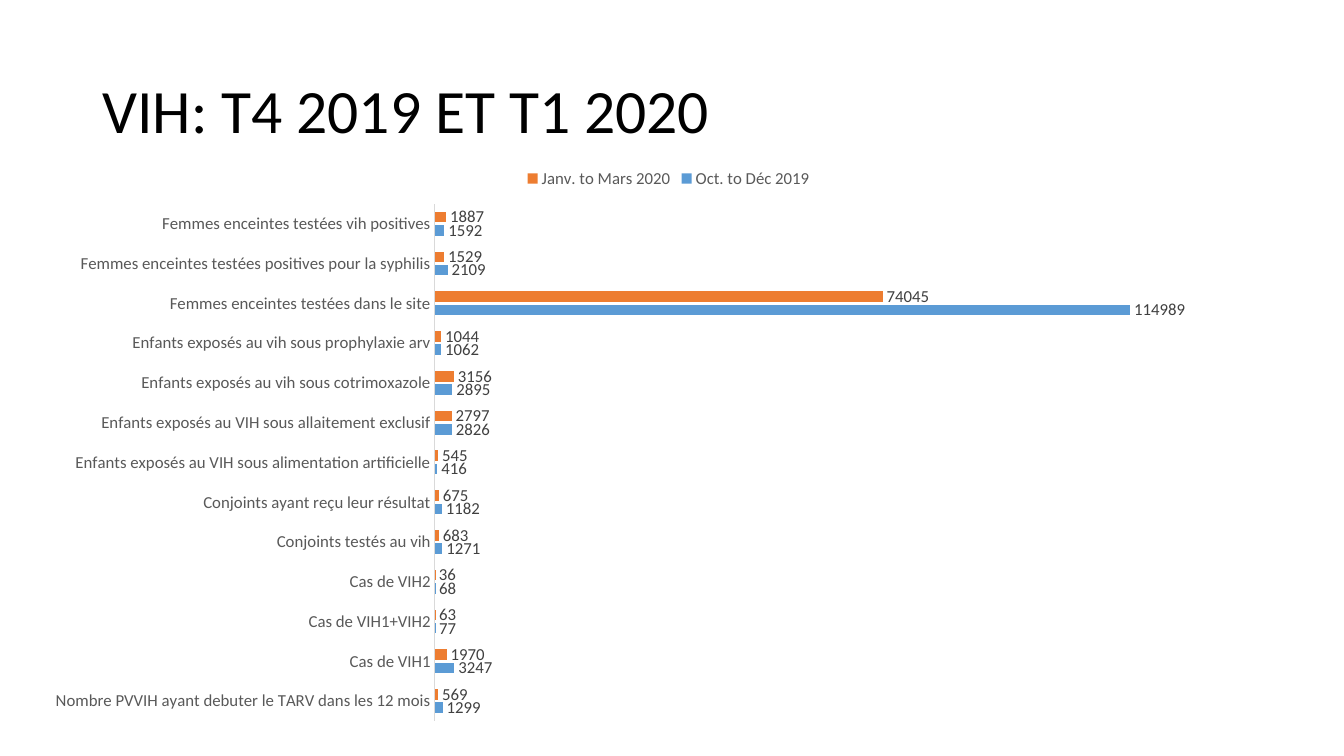
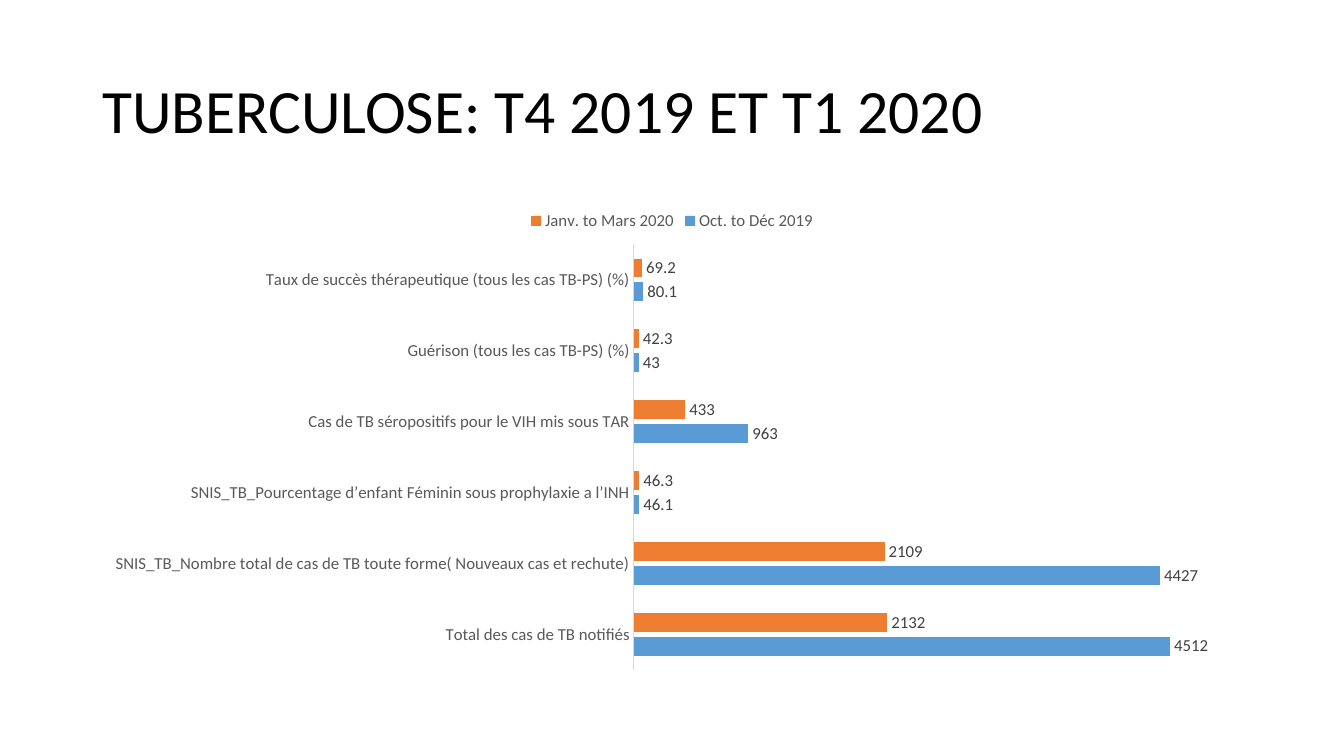
from pptx import Presentation
from pptx.chart.data import CategoryChartData
from pptx.dml.color import RGBColor
from pptx.enum.chart import XL_CHART_TYPE, XL_LABEL_POSITION, XL_LEGEND_POSITION, XL_TICK_MARK
from pptx.enum.text import MSO_ANCHOR
from pptx.util import Cm, Pt

BAR = XL_CHART_TYPE.BAR_CLUSTERED
OUTSIDE_END = XL_LABEL_POSITION.OUTSIDE_END
TOP = XL_LEGEND_POSITION.TOP
NO_TICK = XL_TICK_MARK.NONE
MIDDLE = MSO_ANCHOR.MIDDLE

FONT = "Calibri"
COLORS = {
    "title": "000000",
    "axis_text": "595959",
    "axis_line": "D9D9D9",
    "value": "404040",
    "2019": "5B9BD5",
    "2020": "ED7D31",
}
PERIODS = [("Oct. to Déc 2019", "2019"), ("Janv. to Mars 2020", "2020")]

HIV = [
    ("Nombre PVVIH ayant debuter le TARV dans les 12 mois", 1299, 569),
    ("Cas de VIH1", 3247, 1970),
    ("Cas de VIH1+VIH2", 77, 63),
    ("Cas de VIH2", 68, 36),
    ("Conjoints testés au vih", 1271, 683),
    ("Conjoints ayant reçu leur résultat", 1182, 675),
    ("Enfants exposés au VIH sous alimentation artificielle", 416, 545),
    ("Enfants exposés au VIH sous allaitement exclusif", 2826, 2797),
    ("Enfants exposés au vih sous cotrimoxazole", 2895, 3156),
    ("Enfants exposés au vih sous prophylaxie arv", 1062, 1044),
    ("Femmes enceintes testées dans le site", 114989, 74045),
    ("Femmes enceintes testées positives pour la syphilis", 2109, 1529),
    ("Femmes enceintes testées vih positives", 1592, 1887),
]
TB = [
    ("Total des cas de TB notifiés", 4512, 2132),
    ("SNIS_TB_Nombre total de cas de TB toute forme( Nouveaux cas et rechute)", 4427, 2109),
    ("SNIS_TB_Pourcentage d’enfant Féminin sous prophylaxie a l’INH", 46.1, 46.3),
    ("Cas de TB séropositifs pour le VIH mis sous TAR", 963, 433),
    ("Guérison (tous les cas TB-PS) (%)", 43, 42.3),
    ("Taux de succès thérapeutique (tous les cas TB-PS) (%)", 80.1, 69.2),
]


def rgb(name):
    return RGBColor.from_string(COLORS[name])


def style_font(font, size, color):
    font.name = FONT
    font.size = Pt(size)
    font.color.rgb = rgb(color)


def add_title(s, text):
    tf = s.shapes.add_textbox(Cm(2.33), Cm(1.01), Cm(29.21), Cm(3.68)).text_frame
    tf.word_wrap = True
    tf.vertical_anchor = MIDDLE
    p = tf.paragraphs[0]
    p.line_spacing = 0.9
    r = p.add_run()
    r.text = text
    style_font(r.font, 44, "title")


def style_series(series, color):
    series.format.fill.solid()
    series.format.fill.fore_color.rgb = rgb(color)
    series.invert_if_negative = False
    labels = series.data_labels
    labels.show_value = True
    labels.position = OUTSIDE_END
    labels.number_format = "General"
    labels.number_format_is_linked = False
    style_font(labels.font, 12, "value")


def add_bar_chart(s, rows, left, top, width, height):
    cats, *columns = zip(*rows)
    data = CategoryChartData()
    data.categories = cats
    for (name, _), values in zip(PERIODS, columns):
        data.add_series(name, values)
    chart = s.shapes.add_chart(BAR, Cm(left), Cm(top), Cm(width), Cm(height), data).chart
    style_font(chart.font, 12, "title")
    chart.has_title = False

    chart.has_legend = True
    chart.legend.position = TOP
    chart.legend.include_in_layout = False
    style_font(chart.legend.font, 12, "axis_text")

    cat_axis = chart.category_axis
    cat_axis.major_tick_mark = NO_TICK
    cat_axis.minor_tick_mark = NO_TICK
    cat_axis.format.line.color.rgb = rgb("axis_line")
    cat_axis.format.line.width = Pt(0.75)
    style_font(cat_axis.tick_labels.font, 12, "axis_text")

    val_axis = chart.value_axis
    val_axis.visible = False
    val_axis.has_major_gridlines = False
    val_axis.minimum_scale = 0

    plot = chart.plots[0]
    plot.vary_by_categories = False
    plot.gap_width = 150
    plot.overlap = -25
    for series, (_, color) in zip(plot.series, PERIODS):
        style_series(series, color)


def add_chart_slide(prs, title, rows, *box):
    s = prs.slides.add_slide(prs.slide_layouts[6])
    add_title(s, title)
    add_bar_chart(s, rows, *box)


def main():
    prs = Presentation()
    prs.slide_width = Cm(33.87)
    prs.slide_height = Cm(19.05)
    add_chart_slide(prs, "VIH: T4 2019 ET T1 2020", HIV, 0.76, 3.96, 32.18, 14.5)
    add_chart_slide(prs, "TUBERCULOSE: T4 2019 ET T1 2020", TB, 2.33, 5.03, 29.21, 12.09)
    prs.save("out.pptx")


if __name__ == "__main__":
    main()
